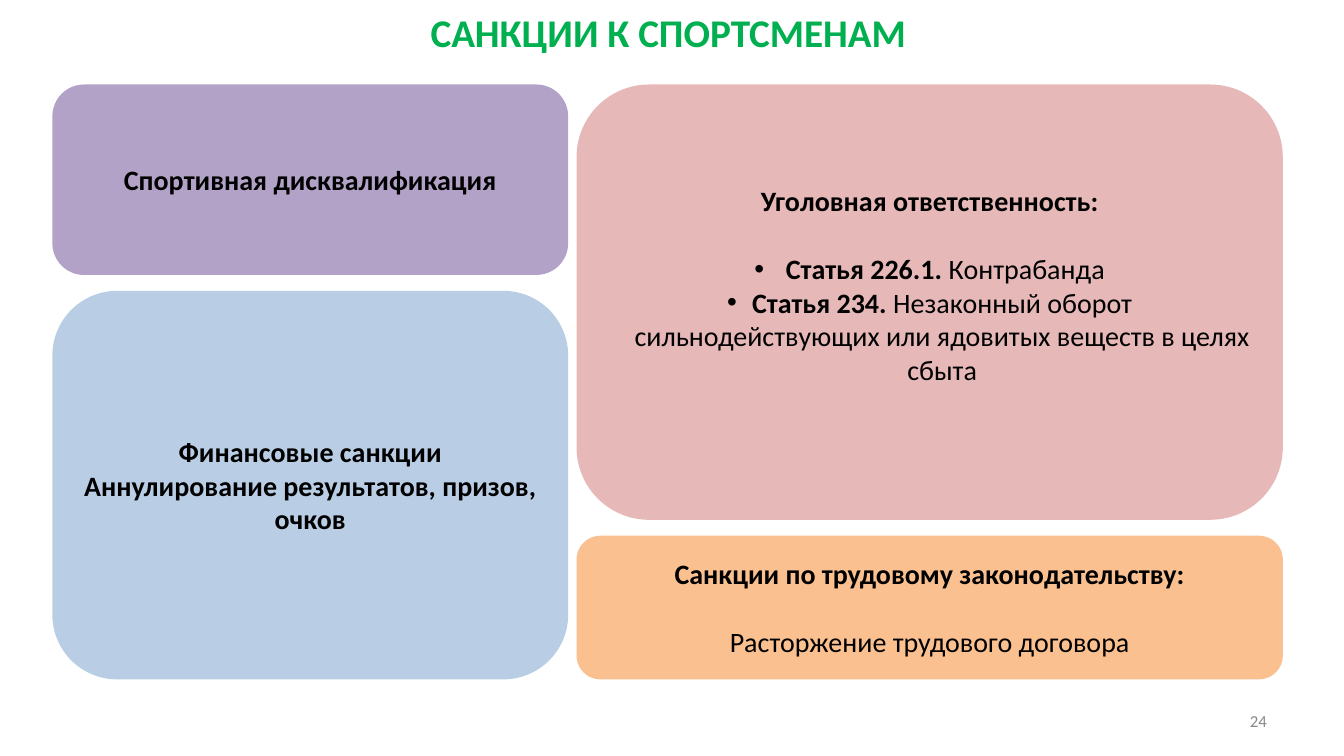
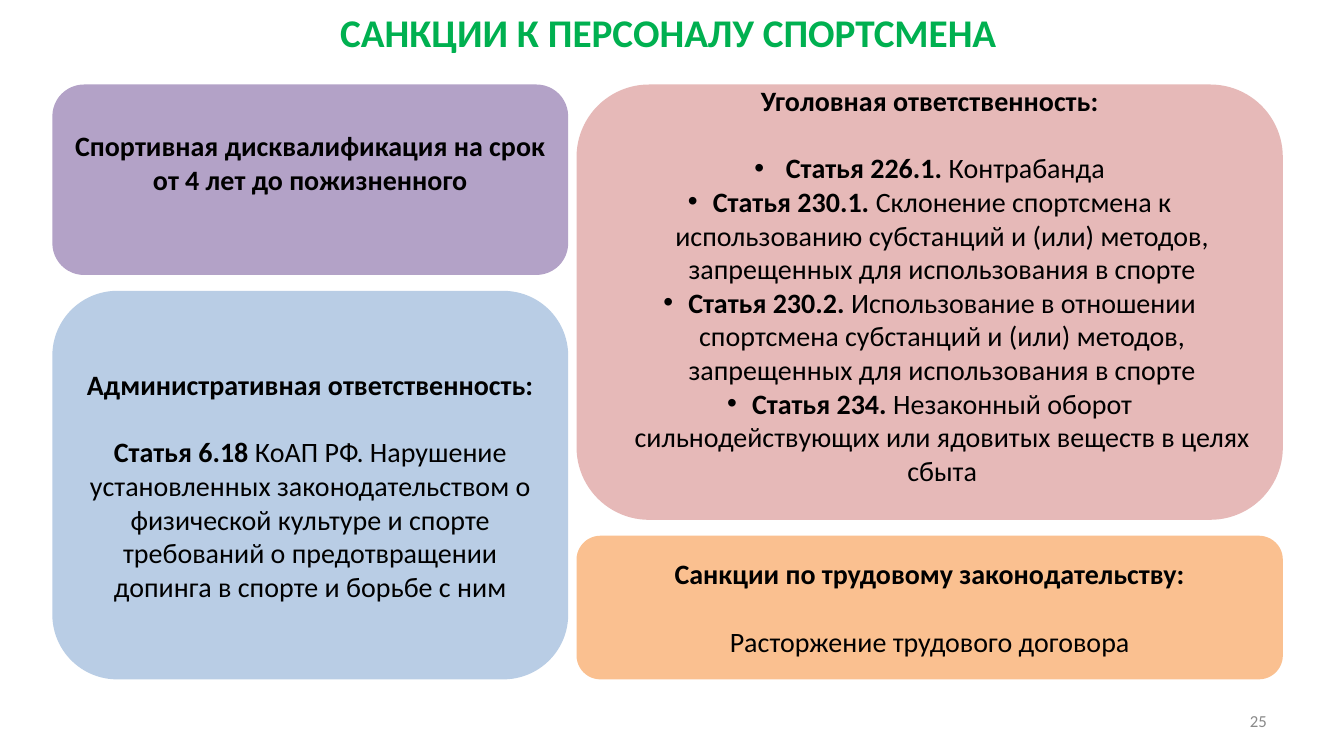
"""Build two slides on sanctions for athletes and their support staff."""
import lxml.etree
import pptx
import pptx.dml.color
import pptx.enum.shapes
import pptx.enum.text
import pptx.oxml.ns
import pptx.util

Cm = pptx.util.Cm
Pt = pptx.util.Pt
RGBColor = pptx.dml.color.RGBColor
ALIGN = pptx.enum.text.PP_ALIGN

GREEN = RGBColor(0x00, 0xB0, 0x50)
LILAC = RGBColor(0xB3, 0xA2, 0xC7)
ROSE = RGBColor(0xE6, 0xB9, 0xB8)
BLUE = RGBColor(0xB9, 0xCD, 0xE5)
PEACH = RGBColor(0xFA, 0xC0, 0x90)
BLACK = RGBColor(0x00, 0x00, 0x00)
GRAY = RGBColor(0x89, 0x89, 0x89)

FONT = "Calibri"
ROW = 24.4
TOP, BASE, GAP = 2.13, 17.12, 0.4
LEFT, RIGHT = (1.32, 13), (14.53, 17.8)
SPLIT = {LEFT: 4.8, RIGHT: 10.97}


class Deck:
    def __init__(self):
        self.prs = pptx.Presentation()
        self.prs.slide_width = Cm(33.87)
        self.prs.slide_height = Cm(19.05)
        self.slide = None

    def page(self, title, num):
        self.slide = self.prs.slides.add_slide(self.prs.slide_layouts[6])
        self.label((4.14, 0, 25.4, 1.62), title, 28, GREEN, ALIGN.CENTER, True)
        self.label((24.28, 17.65, 7.9, 1.02), num, 12, GRAY, ALIGN.RIGHT)

    def run(self, para, text, size, color, bold=False):
        run = para.add_run()
        run.text = text
        font = run.font
        font.name, font.size, font.bold = FONT, Pt(size), bold
        font.color.rgb = color

    def label(self, area, text, size, color, align, bold=False):
        frame = self.slide.shapes.add_textbox(*map(Cm, area)).text_frame
        frame.word_wrap = True
        frame.vertical_anchor = pptx.enum.text.MSO_ANCHOR.MIDDLE
        para = frame.paragraphs[0]
        para.alignment = align
        self.run(para, text, size, color, bold)

    def bullet(self, para):
        props = para._p.get_or_add_pPr()
        props.set("marL", str(Cm(0.63)))
        props.set("indent", str(-Cm(0.63)))
        tag = pptx.oxml.ns.qn("a:buFont")
        lxml.etree.SubElement(props, tag).set("typeface", "Arial")
        tag = pptx.oxml.ns.qn("a:buChar")
        lxml.etree.SubElement(props, tag).set("char", "•")

    def card(self, col, low, color, paras, lift=0, gap=ROW, dots=False):
        x, width = col
        split = TOP + SPLIT[col]
        top, end = (split + GAP, BASE) if low else (TOP, split)
        shape = self.slide.shapes.add_shape(
            pptx.enum.shapes.MSO_SHAPE.ROUNDED_RECTANGLE,
            Cm(x), Cm(top), Cm(width), Cm(end - top))
        shape.shadow.inherit = False
        shape.fill.solid()
        shape.fill.fore_color.rgb = color
        shape.line.fill.background()
        frame = shape.text_frame
        frame.word_wrap = True
        frame.vertical_anchor = pptx.enum.text.MSO_ANCHOR.MIDDLE
        frame.margin_bottom = Cm(0.13) + Pt(lift * ROW)
        for i, runs in enumerate(paras):
            para = frame.add_paragraph() if i else frame.paragraphs[0]
            para.alignment = ALIGN.CENTER
            if i and dots:
                self.bullet(para)
            if i == 1:
                para.space_before = Pt(gap)
            for text, bold in runs:
                self.run(para, text, 20, BLACK, bold)

    def crime(self, *extra):
        head = [("Уголовная ответственность:", True)]
        first = [(" ", False), ("Статья 226.1. ", True), ("Контрабанда", False)]
        last = [("Статья 234. ", True),
                ("Незаконный оборот сильнодействующих или ядовитых "
                 "веществ в целях сбыта", False)]
        self.card(RIGHT, False, ROSE, [head, first, *extra, last], 1, dots=True)

    def labor(self):
        self.card(RIGHT, True, PEACH, [
            [("Санкции по трудовому законодательству:", True)],
            [("Расторжение трудового договора", False)]])


def main():
    deck = Deck()

    deck.page("САНКЦИИ К СПОРТСМЕНАМ", "24")
    deck.card(LEFT, False, LILAC, [[("Спортивная дисквалификация", True)]])
    deck.crime()
    deck.card(LEFT, True, BLUE, [
        [("Финансовые санкции", True)],
        [("Аннулирование результатов, призов, очков", True)]], gap=0)
    deck.labor()

    deck.page("САНКЦИИ К ПЕРСОНАЛУ СПОРТСМЕНА", "25")
    deck.card(LEFT, False, LILAC, [
        [("Спортивная дисквалификация на срок от 4 лет до пожизненного",
          True)]], 1)
    tail = "субстанций и (или) методов, запрещенных для использования в спорте"
    deck.crime(
        [("Статья 230.1. ", True),
         ("Склонение спортсмена к использованию " + tail, False)],
        [("Статья 230.2. ", True),
         ("Использование в отношении спортсмена " + tail, False)])
    deck.card(LEFT, True, BLUE, [
        [("Административная ответственность:", True)],
        [("Статья 6.18 ", True),
         ("КоАП РФ. Нарушение установленных законодательством о физической "
          "культуре и спорте требований о предотвращении допинга в спорте "
          "и борьбе с ним", False)]])
    deck.labor()

    deck.prs.save("out.pptx")


if __name__ == "__main__":
    main()
